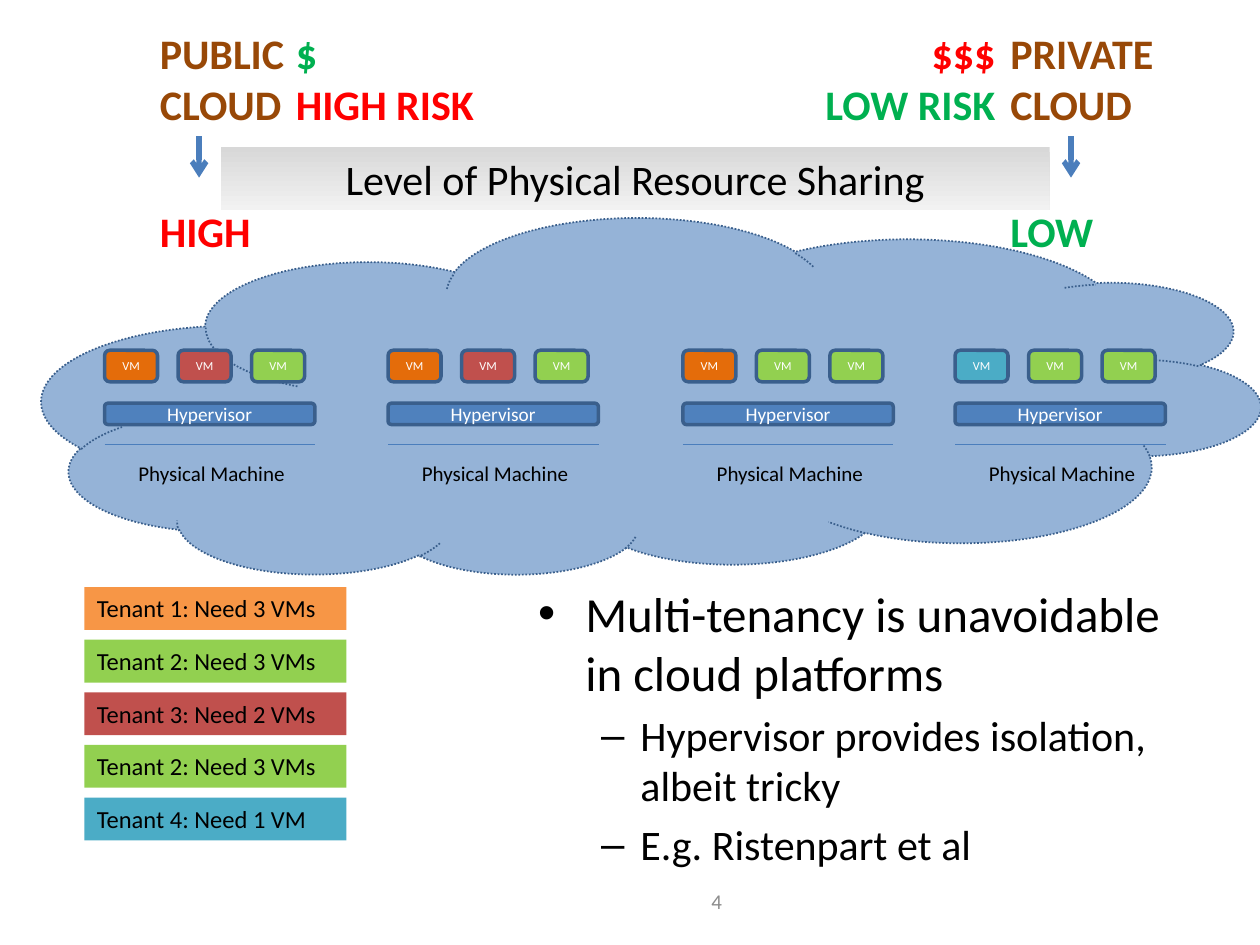
from dataclasses import dataclass

from lxml.etree import SubElement
from pptx import Presentation
from pptx.dml.color import RGBColor
from pptx.enum.dml import MSO_LINE
from pptx.enum.shapes import MSO_CONNECTOR, MSO_SHAPE
from pptx.enum.text import MSO_ANCHOR, MSO_AUTO_SIZE, PP_ALIGN
from pptx.oxml.ns import qn
from pptx.util import Inches, Pt


@dataclass(frozen=True)
class Theme:
    font: str = "Calibri"
    black: str = "000000"
    white: str = "FFFFFF"
    grey: str = "8C8C8C"
    brown: str = "984807"
    good: str = "00B050"
    bad: str = "FF0000"
    cloud: str = "95B3D7"
    outline: str = "3A5F8C"
    rule: str = "4B7EBC"
    hypervisor: str = "4F81BD"
    orange: str = "E46C0A"
    light_orange: str = "F79646"
    red: str = "C0504D"
    green: str = "92D050"
    aqua: str = "4BACC6"
    banner_top: str = "D8D8D8"
    banner_bottom: str = "F2F2F2"
    vm_size: int = 7
    hypervisor_size: int = 11
    small_size: int = 12
    tenant_size: int = 14
    heading_size: int = 24
    body_size: int = 28


@dataclass(frozen=True)
class Box:
    left: float
    top: float
    width: float
    height: float

    def inches(self):
        return [Inches(side) for side in (self.left, self.top, self.width, self.height)]

    def inner(self, left, top, width, height):
        return Box(self.left + left, self.top + top, width, height)


THEME = Theme()


def colour(value):
    return RGBColor.from_string(value)


def style_text(para, size, text_colour, bold=False):
    for span in para.runs:
        span.font.name = THEME.font
        span.font.size = Pt(size)
        span.font.bold = bold
        span.font.color.rgb = colour(text_colour)


def write(shape, lines, size, align=PP_ALIGN.LEFT, anchor=MSO_ANCHOR.TOP, bold=False):
    frame = shape.text_frame
    frame.word_wrap = True
    frame.auto_size = MSO_AUTO_SIZE.NONE
    frame.vertical_anchor = anchor
    frame.text = "\n".join(text for text, _ in lines)
    for para, (_, text_colour) in zip(frame.paragraphs, lines):
        para.alignment = align
        style_text(para, size, text_colour, bold)


def add_label(page, box, lines, size, **layout):
    write(page.shapes.add_textbox(*box.inches()), lines, size, **layout)


def add_block(page, kind, box, fill, line_width=0):
    shape = page.shapes.add_shape(kind, *box.inches())
    shape.shadow.inherit = False
    shape.fill.solid()
    shape.fill.fore_color.rgb = colour(fill)
    if line_width:
        shape.line.color.rgb = colour(THEME.outline)
        shape.line.width = Pt(line_width)
    else:
        shape.line.fill.background()
    return shape


def add_line(page, start, end, width, arrow=False):
    ends = [Inches(value) for value in (*start, *end)]
    connector = page.shapes.add_connector(MSO_CONNECTOR.STRAIGHT, *ends)
    connector.line.color.rgb = colour(THEME.rule)
    connector.line.width = Pt(width)
    properties = connector.element.find(qn("p:spPr"))
    if arrow:
        SubElement(properties.find(qn("a:ln")), qn("a:tailEnd"), type="arrow")
    SubElement(properties, qn("a:effectLst"))


def add_cloud(page, box):
    cloud = add_block(page, MSO_SHAPE.CLOUD, box, THEME.cloud, 1)
    cloud.rotation = 180
    cloud.line.dash_style = MSO_LINE.ROUND_DOT


def add_machine(page, box, vm_fills):
    centred = {"align": PP_ALIGN.CENTER, "anchor": MSO_ANCHOR.MIDDLE}
    vm_pitch = 7 / 12
    for index, fill in enumerate(vm_fills):
        vm_box = box.inner(index * vm_pitch, 0, 0.42, 0.25)
        vm = add_block(page, MSO_SHAPE.ROUNDED_RECTANGLE, vm_box, fill, 2)
        write(vm, [("VM", THEME.white)], THEME.vm_size, **centred)
    hypervisor = add_block(page, MSO_SHAPE.ROUNDED_RECTANGLE,
                           box.inner(0, 0.42, box.width, 0.17), THEME.hypervisor, 2)
    write(hypervisor, [("Hypervisor", THEME.white)], THEME.hypervisor_size, **centred)
    rule_top = box.top + 0.75
    add_line(page, (box.left, rule_top), (box.left + box.width, rule_top), 0.75)
    add_label(page, box.inner(0.17, 0.83, 1.5, 0.3),
              [("Physical Machine", THEME.black)], THEME.small_size)


def add_tenants(page, box, tenants):
    height = 0.34
    pitch = (box.height - height) / (len(tenants) - 1)
    for index, (text, fill) in enumerate(tenants):
        tenant = add_block(page, MSO_SHAPE.RECTANGLE,
                           box.inner(0, index * pitch, box.width, height), fill)
        write(tenant, [(text, THEME.black)], THEME.tenant_size)


def add_banner(page, box):
    banner = add_block(page, MSO_SHAPE.RECTANGLE, box, THEME.banner_top)
    banner.fill.gradient()
    banner.fill.gradient_angle = 270
    for stop, shade in zip(banner.fill.gradient_stops, (THEME.banner_top, THEME.banner_bottom)):
        stop.color.rgb = colour(shade)
    write(banner, [("Level of Physical Resource Sharing", THEME.black)],
          THEME.heading_size, align=PP_ALIGN.CENTER)


def add_cloud_type(page, box, name, sharing, arrow_offset):
    add_label(page, box.inner(0, 0, box.width, 0.91),
              [(name, THEME.brown), ("CLOUD", THEME.brown)], THEME.heading_size, bold=True)
    arrow_left = box.left + arrow_offset
    add_line(page, (arrow_left, box.top + 0.91), (arrow_left, box.top + 1.24), 3, arrow=True)
    add_label(page, box.inner(0, 1.41, 1.17, 0.5), [sharing], THEME.heading_size, bold=True)


def fill_body(page, box, items):
    title = page.shapes.title.element
    title.getparent().remove(title)
    body = page.placeholders[1]
    body.left, body.top, body.width, body.height = box.inches()
    frame = body.text_frame
    frame.text = "\n".join(text for text, _ in items)
    frame.auto_size = MSO_AUTO_SIZE.NONE
    for index, (para, (_, level)) in enumerate(zip(frame.paragraphs, items)):
        size = THEME.heading_size if level else THEME.body_size
        para.level = level
        para.space_before = Pt(size * 0.2 if index else 0)
        style_text(para, size, THEME.black)


def main():
    deck = Presentation()
    deck.slide_width, deck.slide_height = Inches(10), Inches(7.5)
    page = deck.slides.add_slide(deck.slide_layouts[1])

    fill_body(page, Box(4.17, 4.58, 5.42, 2.67), [
        ("Multi-tenancy is unavoidable in cloud platforms", 0),
        ("Hypervisor provides isolation, albeit tricky", 1),
        ("E.g. Ristenpart et al", 1)])
    add_cloud(page, Box(0.33, 1.74, 9.67, 2.83))
    for left, fills in ((0.83, (THEME.orange, THEME.red, THEME.green)),
                        (3.08, (THEME.orange, THEME.red, THEME.green)),
                        (5.42, (THEME.orange, THEME.green, THEME.green)),
                        (7.58, (THEME.aqua, THEME.green, THEME.green))):
        add_machine(page, Box(left, 2.78, 1.67, 1.13), fills)
    add_tenants(page, Box(0.67, 4.66, 2.08, 2.01), [
        ("Tenant 1: Need 3 VMs", THEME.light_orange),
        ("Tenant 2: Need 3 VMs", THEME.green),
        ("Tenant 3: Need 2 VMs", THEME.red),
        ("Tenant 2: Need 3 VMs", THEME.green),
        ("Tenant 4: Need 1 VM", THEME.aqua)])
    add_label(page, Box(3.5, 6.95, 2.33, 0.4), [("4", THEME.grey)], THEME.small_size,
              align=PP_ALIGN.RIGHT, anchor=MSO_ANCHOR.MIDDLE)
    add_banner(page, Box(1.75, 1.17, 6.58, 0.5))
    add_cloud_type(page, Box(1.17, 0.17, 1.5, 1.91), "PUBLIC", ("HIGH", THEME.bad), 0.41)
    add_cloud_type(page, Box(7.92, 0.17, 1.5, 1.91), "PRIVATE", ("LOW", THEME.good), 0.58)
    add_label(page, Box(2.25, 0.17, 2.5, 0.91),
              [("$", THEME.good), ("HIGH RISK", THEME.bad)], THEME.heading_size, bold=True)
    add_label(page, Box(6.33, 0.17, 1.67, 0.91),
              [("$$$", THEME.bad), ("LOW RISK", THEME.good)], THEME.heading_size,
              align=PP_ALIGN.RIGHT, bold=True)
    deck.save("out.pptx")


if __name__ == "__main__":
    main()
